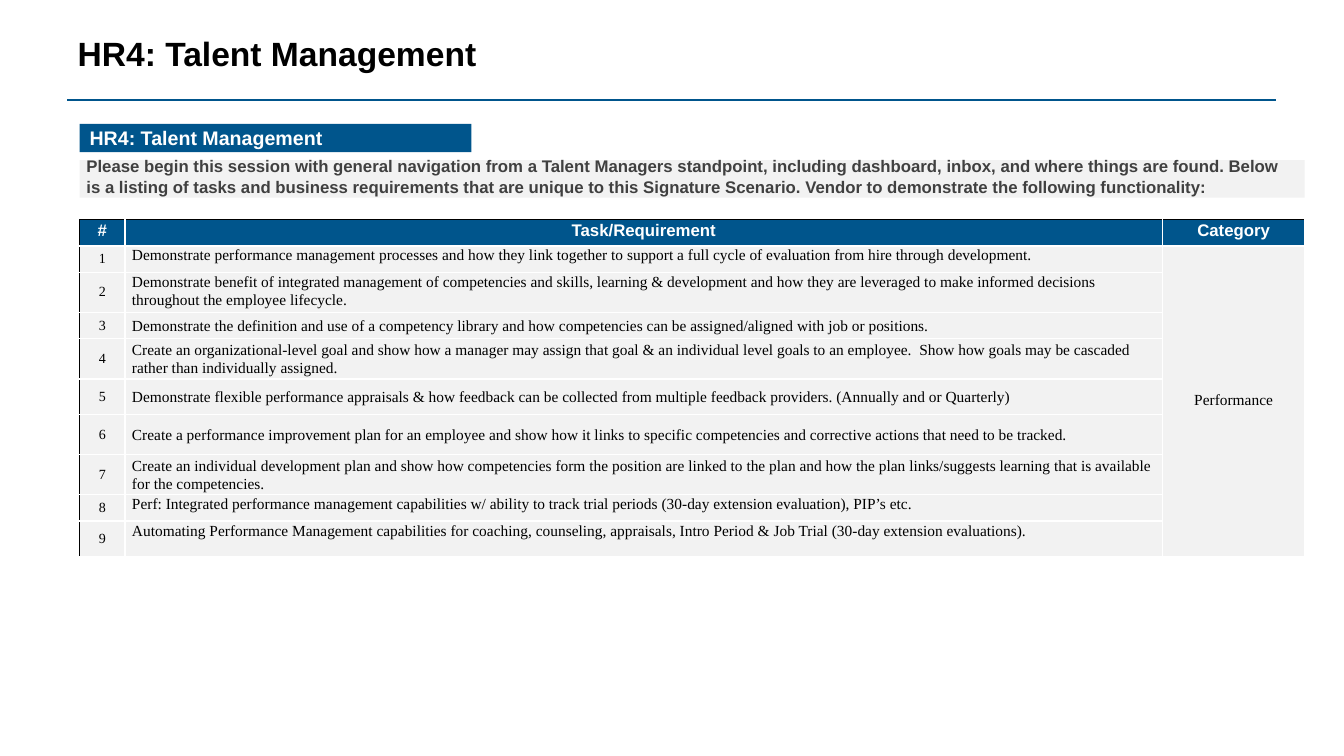
from dataclasses import dataclass

from lxml.etree import SubElement
from pptx import Presentation
from pptx.dml.color import RGBColor as RGB
from pptx.enum.shapes import MSO_CONNECTOR as CONNECTOR, MSO_SHAPE as SHAPE
from pptx.enum.text import MSO_ANCHOR as ANCHOR, MSO_AUTO_SIZE as AUTO, PP_ALIGN as ALIGN
from pptx.oxml.ns import qn
from pptx.util import Emu, Pt


@dataclass(frozen=True)
class Theme:
    blue: str = "00558C"
    panel: str = "F2F2F2"
    white: str = "FFFFFF"
    black: str = "000000"
    grey: str = "404040"
    sans: str = "Arial"
    serif: str = "Times New Roman"
    title: int = 24
    banner: int = 14
    head: int = 12
    body: int = 11
    number: int = 10


T = Theme()
PX = 9144  # 100 px to the inch
TASKS = [  # row height, anchor, text
    (26, ANCHOR.TOP, "Demonstrate performance management processes and how they link together to support a full cycle of evaluation from hire through development."),
    (40, ANCHOR.TOP, "Demonstrate benefit of integrated management of competencies and skills, learning & development and how they are leveraged to make informed decisions throughout the employee lifecycle."),
    (26, ANCHOR.MIDDLE, "Demonstrate the definition and use of a competency library and how competencies can be assigned/aligned with job or positions."),
    (40, ANCHOR.MIDDLE, "Create an organizational-level goal and show how a manager may assign that goal & an individual level goals to an employee.  Show how goals may be cascaded rather than individually assigned."),
    (35, ANCHOR.MIDDLE, "Demonstrate flexible performance appraisals & how feedback can be collected from multiple feedback providers. (Annually and or Quarterly)"),
    (40, ANCHOR.MIDDLE, "Create a performance improvement plan for an employee and show how it links to specific competencies and corrective actions that need to be tracked."),
    (40, ANCHOR.MIDDLE, "Create an individual development plan and show how competencies form the position are linked to the plan and how the plan links/suggests learning that is available for the competencies."),
    (26, ANCHOR.TOP, "Perf: Integrated performance management capabilities w/ ability to track trial periods (30-day extension evaluation), PIP’s etc."),
    (35, ANCHOR.TOP, "Automating Performance Management capabilities for coaching, counseling, appraisals, Intro Period & Job Trial (30-day extension evaluations)."),
]


def px(*lengths):
    return [Emu(n * PX) for n in lengths]


def write(tf, text, font, size, color, bold=False, align=ALIGN.LEFT, spacing=1.0):
    p = tf.paragraphs[0]
    p.text, p.alignment, p.line_spacing = text, align, spacing
    p.font.name, p.font.size, p.font.bold = font, Pt(size), bold
    p.font.color.rgb = RGB.from_string(color)


prs = Presentation()
prs.slide_width, prs.slide_height = px(1334, 750)
s = prs.slides.add_slide(prs.slide_layouts[5])

# Title and rule
title = s.shapes.title
title.left, title.top, title.width, title.height = px(67, 32, 1201, 65)
title.text_frame.auto_size = AUTO.NONE
title.text_frame.vertical_anchor = ANCHOR.TOP
write(title.text_frame, "HR4: Talent Management", T.sans, T.title, T.black, True, spacing=0.9)
rule = s.shapes.add_connector(CONNECTOR.STRAIGHT, *px(67, 99, 1267, 99))
rule.line.color.rgb = RGB.from_string(T.blue)
rule.line.width = Pt(1.5)
SubElement(rule._element.spPr, qn("a:effectLst"))

# Introduction panel and section banner
panel = s.shapes.add_shape(SHAPE.RECTANGLE, *px(79, 159, 1216, 37))
banner = s.shapes.add_shape(SHAPE.RECTANGLE, *px(79, 123, 389, 28))
for sp, color in ((panel, T.panel), (banner, T.blue)):
    sp.shadow.inherit = False
    sp.fill.solid()
    sp.fill.fore_color.rgb = RGB.from_string(color)
    sp.line.fill.background()
banner.text_frame.vertical_anchor = ANCHOR.MIDDLE
write(banner.text_frame, "HR4: Talent Management", T.sans, T.banner, T.white, True)

# Introduction text
intro = s.shapes.add_textbox(*px(76, 150, 1216, 50))
intro.text_frame.word_wrap = True
write(intro.text_frame,
      "Please begin this session with general navigation from a Talent Managers standpoint, "
      "including dashboard, inbox, and where things are found. Below is a listing of tasks and "
      "business requirements that are unique to this Signature Scenario. Vendor to demonstrate "
      "the following functionality:", T.sans, T.head, T.grey, True)

# Table grid
heights = [26] + [height for height, _, _ in TASKS]
frame = s.shapes.add_table(len(heights), 3, *px(79, 218, 1216, sum(heights)))
table = frame.table
table.horz_banding = False
for column, width in zip(table.columns, px(45, 1030, 141)):
    column.width = width
for row, height in zip(table.rows, px(*heights)):
    row.height = height
table.cell(1, 2).merge(table.cell(len(TASKS), 2))

# Cell borders, fills and margins
for r, row in enumerate(table.rows):
    for c, cell in enumerate(row.cells):
        for side in "LRTB":
            dark = (side == "L" and c == 0) or (side == "T" and r == 0)
            ln = SubElement(cell._tc.get_or_add_tcPr(), qn(f"a:ln{side}"), w=str(Pt(1)))
            SubElement(SubElement(ln, qn("a:solidFill")), qn("a:srgbClr"),
                       val=T.black if dark else T.white)
        cell.fill.solid()
        cell.fill.fore_color.rgb = RGB.from_string(T.panel if r else T.blue)
        is_task = r > 0 and c == 1
        cell.margin_left = cell.margin_right = Emu((7 if is_task else 5) * PX)
        cell.margin_top = cell.margin_bottom = Emu((0 if is_task else 5) * PX)
        cell.vertical_anchor = TASKS[r - 1][1] if is_task else ANCHOR.MIDDLE

# Table text
for c, heading in enumerate(("#", "Task/Requirement", "Category")):
    write(table.cell(0, c).text_frame, heading, T.sans, T.head, T.white, True, ALIGN.CENTER, Pt(11))
for r, (_, _, task) in enumerate(TASKS, 1):
    write(table.cell(r, 0).text_frame, str(r), T.serif, T.number, T.black,
          align=ALIGN.CENTER, spacing=Pt(11))
    write(table.cell(r, 1).text_frame, task, T.serif, T.body, T.black, spacing=1.07)
write(table.cell(1, 2).text_frame, "Performance", T.serif, T.body, T.black,
      align=ALIGN.CENTER, spacing=Pt(11))

prs.save("out.pptx")
